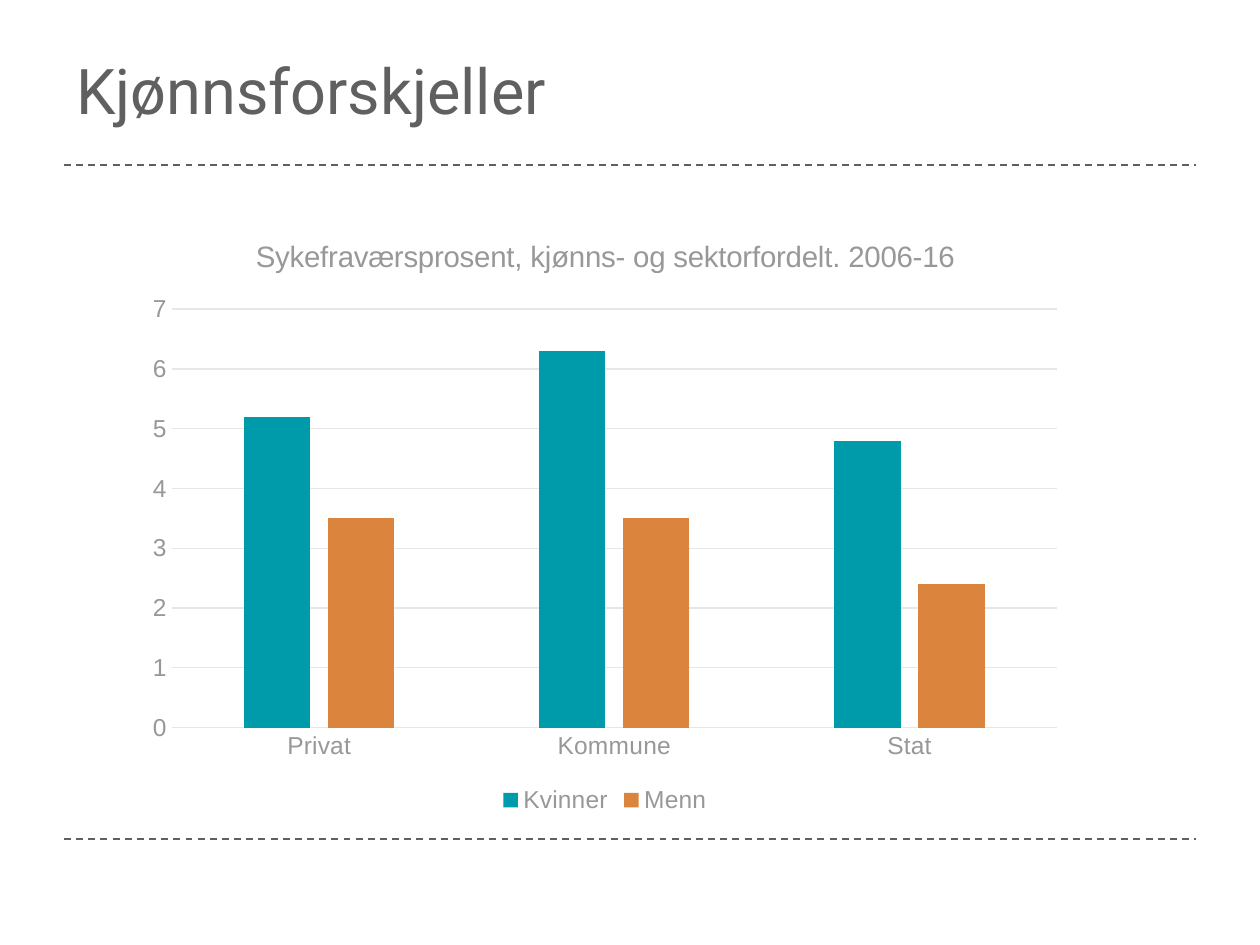
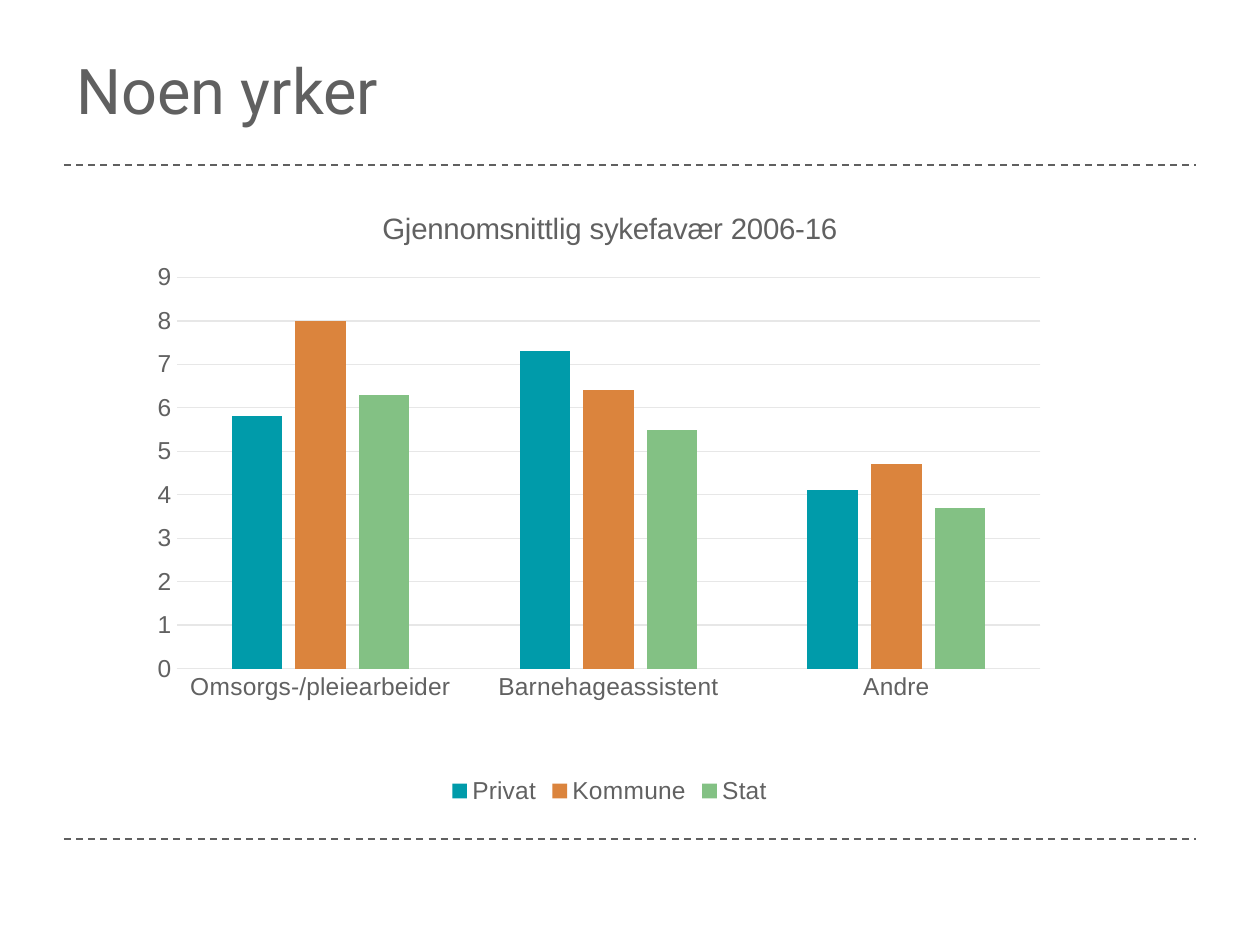
from lxml.etree import SubElement
from pptx import Presentation
from pptx.chart.data import CategoryChartData
from pptx.dml.color import RGBColor
from pptx.enum.chart import XL_CHART_TYPE as ChartType, XL_LEGEND_POSITION as LegendPosition
from pptx.enum.chart import XL_TICK_MARK as TickMark
from pptx.enum.dml import MSO_LINE_DASH_STYLE as DashStyle
from pptx.enum.shapes import MSO_CONNECTOR as Connector
from pptx.enum.text import MSO_ANCHOR as Anchor
from pptx.oxml.ns import qn
from pptx.util import Emu, Pt

GREY = RGBColor(0x60, 0x60, 0x60)
CHART_GREY = RGBColor(0x61, 0x61, 0x61)
LIGHT_GREY = RGBColor(0x98, 0x98, 0x98)
GRID = RGBColor(0xE7, 0xE7, 0xE7)
TEAL = RGBColor(0x00, 0x9B, 0xAA)
ORANGE = RGBColor(0xDB, 0x84, 0x3D)
GREEN = RGBColor(0x83, 0xC1, 0x84)
SERIES_COLORS = (TEAL, ORANGE, GREEN)

SLIDES = [
    {
        "title": "Kjønnsforskjeller",
        "chart_title": "Sykefraværsprosent, kjønns- og sektorfordelt. 2006-16",
        "box": (134, 214, 942, 605),
        "color": LIGHT_GREY,
        "maximum": 7,
        "plot": None,
        "categories": ["Privat", "Kommune", "Stat"],
        "series": {"Kvinner": (5.2, 6.3, 4.8), "Menn": (3.5, 3.5, 2.4)},
    },
    {
        "title": "Noen yrker",
        "chart_title": "Gjennomsnittlig sykefavær 2006-16",
        "box": (123, 185, 973, 625),
        "color": CHART_GREY,
        "maximum": 9,
        "plot": {"x": 0.055, "y": 0.148, "w": 0.888, "h": 0.626},
        "categories": ["Omsorgs-/pleiearbeider", "Barnehageassistent", "Andre"],
        "series": {
            "Privat": (5.8, 7.3, 4.1),
            "Kommune": (8, 6.4, 4.7),
            "Stat": (6.3, 5.5, 3.7),
        },
    },
]

SLIDE_SIZE = (1260, 945)
TITLE_BOX = (64, 26, 1134, 127)
RULE_LEFT, RULE_RIGHT = 64, 1196
RULE_TOPS = (165, 839)


def px(length):
    return Emu(round(length * 914400 / 126))


def style_font(font, *, size, color, name="Arial"):
    font.name = name
    font.size = Pt(size)
    font.bold = False
    font.color.rgb = color


def write_text(frame, text, **font_format):
    paragraph = frame.paragraphs[0]
    run = paragraph.add_run()
    run.text = text
    style_font(run.font, **font_format)


def style_line(line, color, width):
    line.color.rgb = color
    line.width = Pt(width)


def add_rule(slide, top):
    rule = slide.shapes.add_connector(
        Connector.STRAIGHT, px(RULE_LEFT), px(top), px(RULE_RIGHT), px(top))
    style_line(rule.line, GREY, 1)
    rule.line.dash_style = DashStyle.DASH
    SubElement(rule._element.spPr, qn("a:effectLst"))


def add_title(slide, text):
    frame = slide.shapes.add_textbox(*map(px, TITLE_BOX)).text_frame
    frame.word_wrap = True
    frame.vertical_anchor = Anchor.MIDDLE
    write_text(frame, text, size=36, color=GREY, name="Roboto")


def set_inner_plot(chart, fractions):
    plot_area = chart._chartSpace.chart.plotArea
    layout = plot_area.find(qn("c:layout"))
    if layout is None:
        layout = SubElement(plot_area, qn("c:layout"))
        plot_area.insert(0, layout)
    manual = SubElement(layout, qn("c:manualLayout"))
    settings = {"layoutTarget": "inner", "xMode": "edge", "yMode": "edge", **fractions}
    for tag, value in settings.items():
        SubElement(manual, qn(f"c:{tag}")).set("val", str(value))


def add_column_chart(slide, content):
    data = CategoryChartData()
    data.categories = content["categories"]
    for name, values in content["series"].items():
        data.add_series(name, values)
    chart = slide.shapes.add_chart(
        ChartType.COLUMN_CLUSTERED, *map(px, content["box"]), data).chart
    color = content["color"]
    style_font(chart.font, size=14, color=CHART_GREY)

    chart.has_title = True
    write_text(chart.chart_title.text_frame, content["chart_title"], size=16.8, color=color)
    chart.chart_title.include_in_layout = False

    chart.has_legend = True
    chart.legend.position = LegendPosition.BOTTOM
    chart.legend.include_in_layout = False
    style_font(chart.legend.font, size=14, color=color)

    for axis in (chart.category_axis, chart.value_axis):
        axis.major_tick_mark = axis.minor_tick_mark = TickMark.NONE
        style_font(axis.tick_labels.font, size=14, color=color)
    style_line(chart.category_axis.format.line, GRID, 0.75)
    value_axis = chart.value_axis
    value_axis.minimum_scale = 0
    value_axis.maximum_scale = content["maximum"]
    value_axis.major_unit = 1
    value_axis.format.line.fill.background()
    style_line(value_axis.major_gridlines.format.line, GRID, 0.75)

    plot = chart.plots[0]
    plot.gap_width = 219
    plot.overlap = -27
    plot.vary_by_categories = False
    for series, fill_color in zip(plot.series, SERIES_COLORS):
        series.format.fill.solid()
        series.format.fill.fore_color.rgb = fill_color
    if content["plot"]:
        set_inner_plot(chart, content["plot"])


def main():
    presentation = Presentation()
    presentation.slide_width, presentation.slide_height = map(px, SLIDE_SIZE)
    for content in SLIDES:
        slide = presentation.slides.add_slide(presentation.slide_layouts[6])
        for top in RULE_TOPS:
            add_rule(slide, top)
        add_title(slide, content["title"])
        add_column_chart(slide, content)
    presentation.save("out.pptx")


if __name__ == "__main__":
    main()
